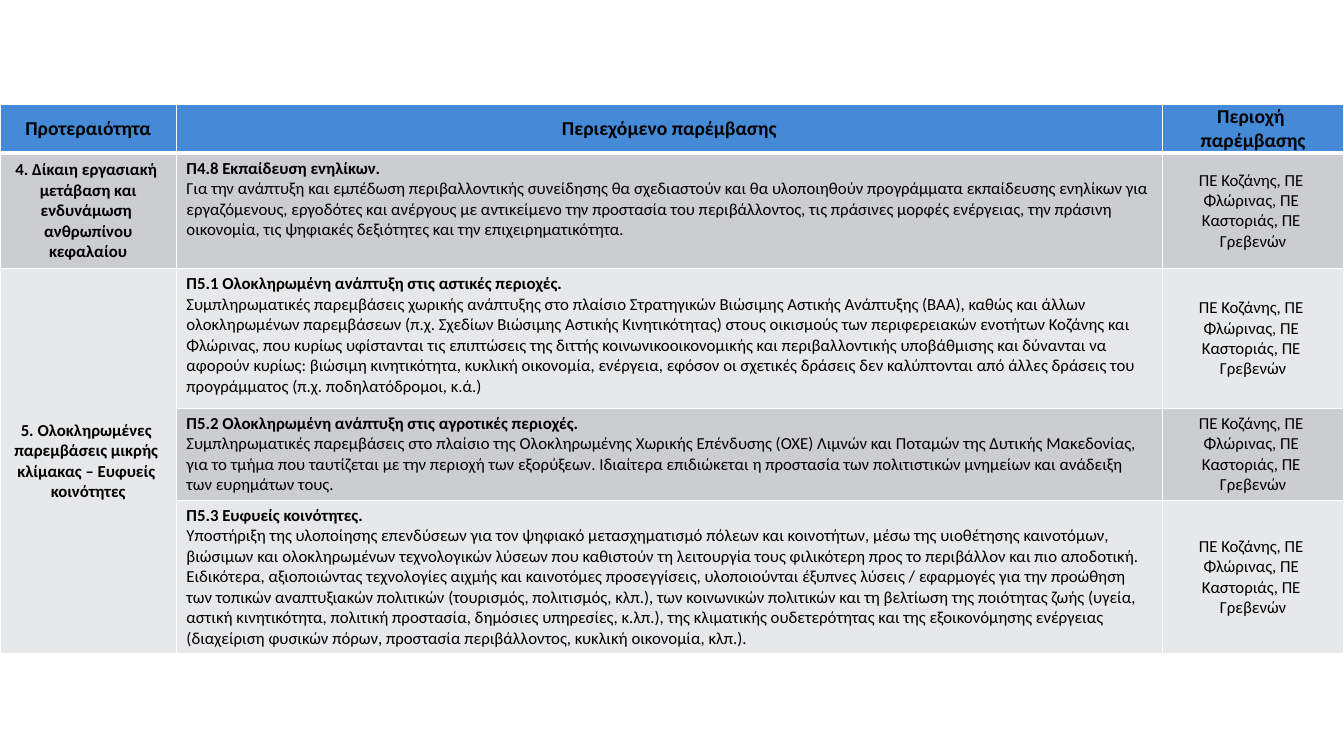
from dataclasses import dataclass

from lxml import etree
from pptx import Presentation
from pptx.dml.color import RGBColor
from pptx.enum.text import MSO_ANCHOR, PP_ALIGN
from pptx.oxml.ns import qn
from pptx.table import Table, _Cell
from pptx.util import Emu, Pt

PX = 9525  # EMU per px, 96 px to the inch
TOP, MIDDLE = MSO_ANCHOR.TOP, MSO_ANCHOR.MIDDLE
LEFT, CENTER = PP_ALIGN.LEFT, PP_ALIGN.CENTER
FONT = "Calibri"
COLORS = {
    "header": "448AD7",
    "dark": "CCCDD0",
    "light": "E7E8E9",
    "text": "000000",
    "border": "FFFFFF",
}
TABLE_TOP = 99
COLUMN_WIDTHS = [168, 939, 173]
HEADER_HEIGHT = 47
THIN, THICK = 1, 3  # border widths in points


@dataclass
class Intervention:
    height: int
    fill: str
    priority: str
    title: str
    description: str


HEADERS = ["Προτεραιότητα", "Περιεχόμενο παρέμβασης", "Περιοχή \vπαρέμβασης"]
REGION = "ΠΕ Κοζάνης, ΠΕ \nΦλώρινας, ΠΕ \nΚαστοριάς, ΠΕ \nΓρεβενών"
INTERVENTIONS = [
    Intervention(
        110, "dark",
        "4. Δίκαιη εργασιακή \nμετάβαση και ενδυνάμωση \nανθρωπίνου κεφαλαίου",
        "Π4.8 Εκπαίδευση ενηλίκων.",
        "Για την ανάπτυξη και εμπέδωση περιβαλλοντικής συνείδησης θα σχεδιαστούν και θα "
        "υλοποιηθούν προγράμματα εκπαίδευσης ενηλίκων για εργαζόμενους, εργοδότες και "
        "ανέργους με αντικείμενο την προστασία του περιβάλλοντος, τις πράσινες μορφές "
        "ενέργειας, την πράσινη οικονομία, τις ψηφιακές δεξιότητες και την "
        "επιχειρηματικότητα.",
    ),
    Intervention(
        133, "light",
        "5. Ολοκληρωμένες \nπαρεμβάσεις μικρής \nκλίμακας – Ευφυείς \nκοινότητες",
        "Π5.1 Ολοκληρωμένη ανάπτυξη στις αστικές περιοχές.",
        "Συμπληρωματικές παρεμβάσεις χωρικής ανάπτυξης στο πλαίσιο Στρατηγικών Βιώσιμης "
        "Αστικής Ανάπτυξης (ΒΑΑ), καθώς και άλλων ολοκληρωμένων παρεμβάσεων (π.χ. Σχεδίων "
        "Βιώσιμης Αστικής Κινητικότητας) στους οικισμούς των περιφερειακών ενοτήτων Κοζάνης "
        "και Φλώρινας, που κυρίως υφίστανται τις επιπτώσεις της διττής κοινωνικοοικονομικής "
        "και περιβαλλοντικής υποβάθμισης και δύνανται να αφορούν κυρίως: βιώσιμη "
        "κινητικότητα, κυκλική οικονομία, ενέργεια, εφόσον οι σχετικές δράσεις δεν "
        "καλύπτονται από άλλες δράσεις του προγράμματος (π.χ. ποδηλατόδρομοι, κ.ά.)",
    ),
    Intervention(
        87, "dark", "",
        "Π5.2 Ολοκληρωμένη ανάπτυξη στις αγροτικές περιοχές.",
        "Συμπληρωματικές παρεμβάσεις στο πλαίσιο της Ολοκληρωμένης Χωρικής Επένδυσης (ΟΧΕ) "
        "Λιμνών και Ποταμών της Δυτικής Μακεδονίας, για το τμήμα που ταυτίζεται με την "
        "περιοχή των εξορύξεων. Ιδιαίτερα επιδιώκεται η προστασία των πολιτιστικών μνημείων "
        "και ανάδειξη των ευρημάτων τους.",
    ),
    Intervention(
        144, "light", "",
        "Π5.3 Ευφυείς κοινότητες.",
        "Υποστήριξη της υλοποίησης επενδύσεων για τον ψηφιακό μετασχηματισμό πόλεων και "
        "κοινοτήτων, μέσω της υιοθέτησης καινοτόμων, βιώσιμων και ολοκληρωμένων "
        "τεχνολογικών λύσεων που καθιστούν τη λειτουργία τους φιλικότερη προς το περιβάλλον "
        "και πιο αποδοτική. Ειδικότερα, αξιοποιώντας τεχνολογίες αιχμής και καινοτόμες "
        "προσεγγίσεις, υλοποιούνται έξυπνες λύσεις / εφαρμογές για την προώθηση των τοπικών "
        "αναπτυξιακών πολιτικών (τουρισμός, πολιτισμός, κλπ.), των κοινωνικών πολιτικών και "
        "τη βελτίωση της ποιότητας ζωής (υγεία, αστική κινητικότητα, πολιτική προστασία, "
        "δημόσιες υπηρεσίες, κ.λπ.), της κλιματικής ουδετερότητας και της εξοικονόμησης "
        "ενέργειας (διαχείριση φυσικών πόρων, προστασία περιβάλλοντος, κυκλική οικονομία, "
        "κλπ.).",
    ),
]


def px(length: int) -> Emu:
    return Emu(length * PX)


def set_borders(cell: _Cell, top: int, bottom: int) -> None:
    properties = cell._tc.get_or_add_tcPr()
    widths = {"a:lnL": THIN, "a:lnR": THIN, "a:lnT": top, "a:lnB": bottom}
    for position, (tag, width) in enumerate(widths.items()):
        line = etree.Element(qn(tag), w=str(Pt(width)))
        fill = etree.SubElement(line, qn("a:solidFill"))
        etree.SubElement(fill, qn("a:srgbClr"), val=COLORS["border"])
        properties.insert(position, line)


def fill_cell(cell: _Cell, text: str, fill: str, size: int = 12, bold: bool = False,
              align: PP_ALIGN = CENTER, anchor: MSO_ANCHOR = MIDDLE) -> None:
    cell.fill.solid()
    cell.fill.fore_color.rgb = RGBColor.from_string(COLORS[fill])
    cell.vertical_anchor = anchor
    cell.text_frame.text = text
    for para in cell.text_frame.paragraphs:
        para.alignment = align
        para.font.size = Pt(size)
        for span in para.runs:
            span.font.name = FONT
            span.font.size = Pt(size)
            span.font.bold = bold
            span.font.color.rgb = RGBColor.from_string(COLORS["text"])


def draw_header(table: Table) -> None:
    for cell, heading in zip(table.rows[0].cells, HEADERS):
        fill_cell(cell, heading, "header", size=14, bold=True)
        cell.margin_left = cell.margin_top = cell.margin_right = px(1)
        cell.margin_bottom = 0
        set_borders(cell, THIN, THICK)


def draw_intervention(table: Table, row: int, item: Intervention) -> None:
    priority, content, region = table.rows[row].cells
    fill_cell(priority, item.priority, item.fill, bold=True)
    fill_cell(content, f"{item.title}\n{item.description}", item.fill, align=LEFT, anchor=TOP)
    content.text_frame.paragraphs[0].runs[0].font.bold = True
    fill_cell(region, REGION, item.fill)
    for cell in (priority, content, region):
        set_borders(cell, THICK if row == 1 else THIN, THIN)


def main() -> None:
    deck = Presentation()
    deck.slide_width, deck.slide_height = px(1280), px(720)
    page = deck.slides.add_slide(deck.slide_layouts[6])

    # Table grid
    heights = [HEADER_HEIGHT] + [item.height for item in INTERVENTIONS]
    table = page.shapes.add_table(
        len(heights), len(COLUMN_WIDTHS),
        0, px(TABLE_TOP), px(sum(COLUMN_WIDTHS)), px(sum(heights)),
    ).table
    for column, width in zip(table.columns, COLUMN_WIDTHS):
        column.width = px(width)
    for row, height in zip(table.rows, heights):
        row.height = px(height)

    # Header and interventions
    draw_header(table)
    for row, item in enumerate(INTERVENTIONS, start=1):
        draw_intervention(table, row, item)

    # The fifth priority covers the last three rows
    table.cell(2, 0).merge(table.cell(4, 0))

    deck.save("out.pptx")


if __name__ == "__main__":
    main()
